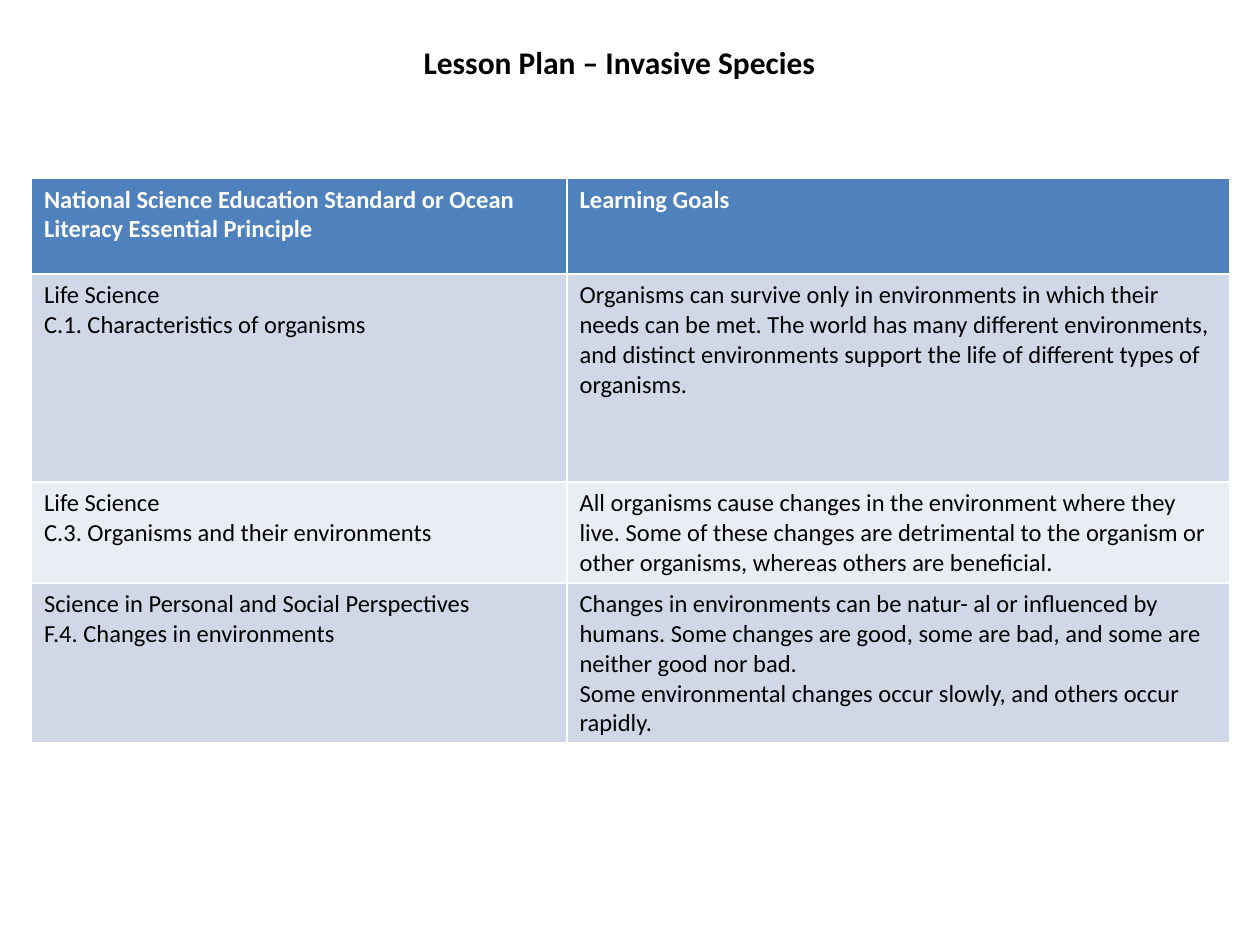
from pptx import Presentation
from pptx.dml.color import RGBColor
from pptx.enum.text import MSO_ANCHOR, MSO_AUTO_SIZE, PP_ALIGN
from pptx.util import Pt

TOP = MSO_ANCHOR.TOP
GROW = MSO_AUTO_SIZE.SHAPE_TO_FIT_TEXT
CENTER = PP_ALIGN.CENTER

WHITE = RGBColor(0xFF, 0xFF, 0xFF)
BLACK = RGBColor(0x00, 0x00, 0x00)
HEADER_BLUE = RGBColor(0x4F, 0x81, 0xBD)
BANDS = (RGBColor(0xD0, 0xD8, 0xE8), RGBColor(0xE9, 0xED, 0xF4))

# Content: each line of a cell is its own paragraph
TITLE = "Lesson Plan – Invasive Species"
STANDARDS = [
    ("National Science Education Standard or Ocean Literacy Essential Principle",
     "Learning Goals"),
    ("Life Science\nC.1. Characteristics of organisms",
     "Organisms can survive only in environments in which their needs can be met. "
     "The world has many different environments, and distinct environments support "
     "the life of different types of organisms."),
    ("Life Science\nC.3. Organisms and their environments",
     "All organisms cause changes in the environment where they live. Some of these "
     "changes are detrimental to the organism or other organisms, whereas others are "
     "beneficial."),
    ("Science in Personal and Social Perspectives\nF.4. Changes in environments",
     "Changes in environments can be natur- al or influenced by humans. Some changes "
     "are good, some are bad, and some are neither good nor bad.\n"
     "Some environmental changes occur slowly, and others occur rapidly."),
]
COLUMN_WIDTHS = (306, 378.5)
ROW_HEIGHTS = (54.7, 118.8, 54.7, 54.7)

TITLE_FONT = {"name": "Calibri", "size": Pt(18), "bold": True}
HEADER_FONT = {"name": "Calibri", "size": Pt(14), "bold": True}
BODY_FONT = {**HEADER_FONT, "bold": False}


def format_text(frame, font_values, color):
    for paragraph in frame.paragraphs:
        for attribute, value in font_values.items():
            setattr(paragraph.font, attribute, value)
        paragraph.font.color.rgb = color


presentation = Presentation()
presentation.slide_width, presentation.slide_height = Pt(720), Pt(540)
slide = presentation.slides.add_slide(presentation.slide_layouts[5])

# Title
title = slide.shapes.title
title.left, title.top, title.width, title.height = Pt(132), Pt(21), Pt(444), Pt(29)
heading = title.text_frame
heading.text = TITLE
heading.word_wrap = True
heading.auto_size = GROW
heading.vertical_anchor = TOP
heading.paragraphs[0].alignment = CENTER
format_text(heading, TITLE_FONT, BLACK)

# Standards table
standards = slide.shapes.add_table(
    len(STANDARDS), len(COLUMN_WIDTHS), Pt(18), Pt(102),
    Pt(sum(COLUMN_WIDTHS)), Pt(sum(ROW_HEIGHTS))).table
for column, width in zip(standards.columns, COLUMN_WIDTHS):
    column.width = Pt(width)
for row, height in zip(standards.rows, ROW_HEIGHTS):
    row.height = Pt(height)

for r, entries in enumerate(STANDARDS):
    if r == 0:
        fill, font_values, color = HEADER_BLUE, HEADER_FONT, WHITE
    else:
        fill, font_values, color = BANDS[(r - 1) % 2], BODY_FONT, BLACK
    for c, entry in enumerate(entries):
        cell = standards.cell(r, c)
        cell.text = entry
        cell.fill.solid()
        cell.fill.fore_color.rgb = fill
        format_text(cell.text_frame, font_values, color)

presentation.save("out.pptx")
